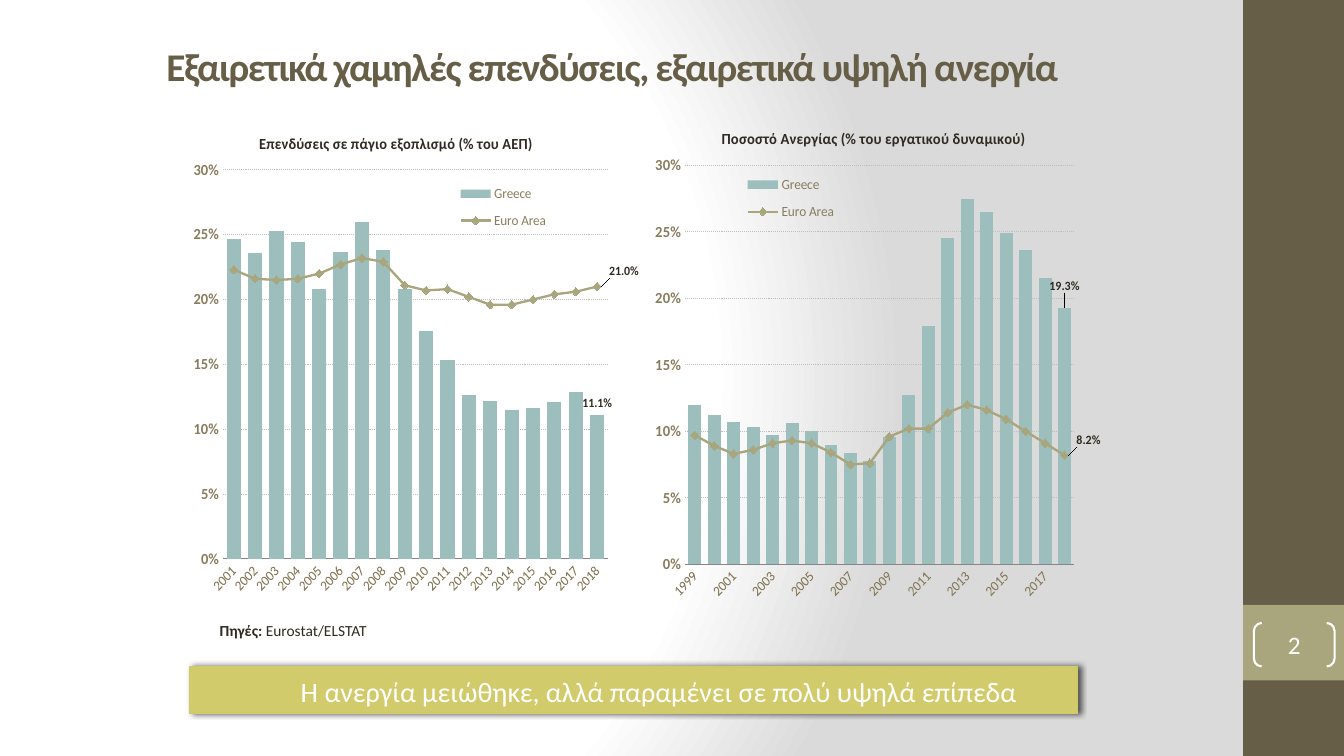
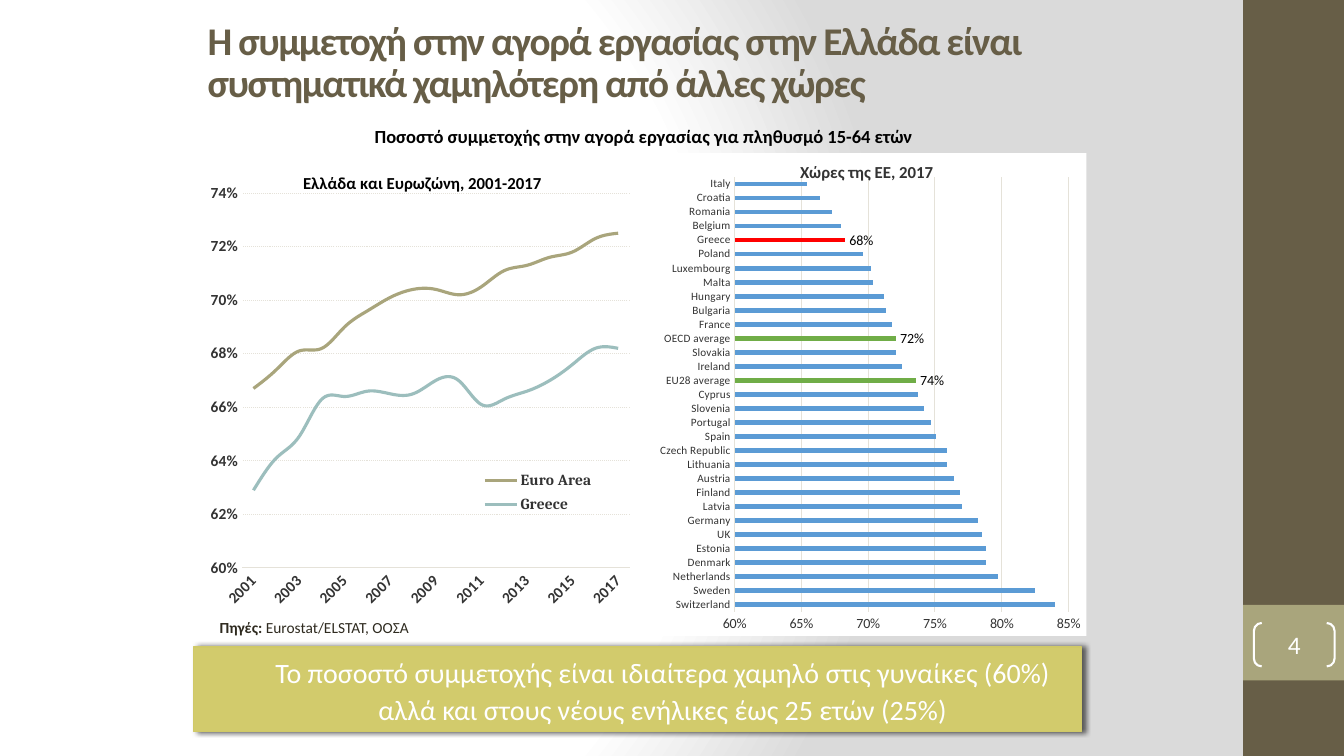
from pptx import Presentation
from pptx.chart.data import CategoryChartData
from pptx.dml.color import RGBColor
from pptx.enum.chart import (XL_CHART_TYPE, XL_LABEL_POSITION, XL_LEGEND_POSITION,
                             XL_MARKER_STYLE, XL_TICK_MARK)
from pptx.enum.dml import MSO_LINE
from pptx.enum.shapes import MSO_SHAPE
from pptx.enum.text import MSO_ANCHOR, PP_ALIGN
from pptx.oxml import parse_xml
from pptx.oxml.ns import nsdecls
from pptx.util import Pt

COLUMN = XL_CHART_TYPE.COLUMN_CLUSTERED
BAR = XL_CHART_TYPE.BAR_CLUSTERED
LINE = XL_CHART_TYPE.LINE
LEFT, CENTER = PP_ALIGN.LEFT, PP_ALIGN.CENTER
MIDDLE = MSO_ANCHOR.MIDDLE
DOTTED = MSO_LINE.ROUND_DOT
NO_TICK = XL_TICK_MARK.NONE

OLIVE = RGBColor(0x67, 0x5E, 0x47)
KHAKI = RGBColor(0xA9, 0xA5, 0x7C)
TEAL = RGBColor(0x9C, 0xBE, 0xBD)
LIME = RGBColor(0xD2, 0xCB, 0x6C)
LIME_EDGE = RGBColor(0xD0, 0xC9, 0x67)
INK = RGBColor(0x2F, 0x2B, 0x20)
TAUPE = RGBColor(0x89, 0x7D, 0x5D)
CHARCOAL = RGBColor(0x33, 0x33, 0x33)
BLACK = RGBColor(0, 0, 0)
WHITE = RGBColor(0xFF, 0xFF, 0xFF)
GRAY = RGBColor(0xBF, 0xBF, 0xBF)
AXIS_GRAY = RGBColor(0x86, 0x86, 0x86)
PALE = RGBColor(0xE5, 0xE2, 0xD9)
BLUE = RGBColor(0x5B, 0x9B, 0xD5)
GREEN = RGBColor(0x70, 0xAD, 0x47)
RED = RGBColor(0xFF, 0, 0)


def style_font(font, size, color, bold=False, name="Calibri"):
    font.name, font.size, font.bold = name, Pt(size), bold
    font.color.rgb = color


def set_layout(owner, index, edge=True, inner=False, **fractions):
    """Give a chart part a manual layout, as fractions of the chart."""
    for old in owner.xpath("c:layout"):
        owner.remove(old)
    target = '<c:layoutTarget val="inner"/>' if inner else ""
    modes = '<c:xMode val="edge"/><c:yMode val="edge"/>' if edge else ""
    values = "".join(f'<c:{key} val="{value}"/>' for key, value in fractions.items())
    owner.insert(index, parse_xml(
        f'<c:layout {nsdecls("c")}><c:manualLayout>{target}{modes}{values}'
        "</c:manualLayout></c:layout>"))


# Chart data; a series is name, values, colour and labelled points with label offsets
INVESTMENT = [
    ("Greece", [0.247, 0.236, 0.253, 0.244, 0.208, 0.237, 0.26, 0.238, 0.208, 0.176,
                0.153, 0.126, 0.122, 0.115, 0.116, 0.121, 0.129, 0.111],
     TEAL, {17: None}),
    ("Euro Area", [0.223, 0.216, 0.215, 0.216, 0.22, 0.227, 0.232, 0.229, 0.211, 0.207,
                   0.208, 0.202, 0.196, 0.196, 0.2, 0.204, 0.206, 0.21],
     KHAKI, {17: (0.01, -0.03)}),
]
UNEMPLOYMENT = [
    ("Greece", [0.12, 0.112, 0.107, 0.103, 0.097, 0.106, 0.1, 0.09, 0.084, 0.078,
                0.096, 0.127, 0.179, 0.245, 0.275, 0.265, 0.249, 0.236, 0.215, 0.193],
     TEAL, {19: (0, -0.02)}),
    ("Euro Area", [0.097, 0.089, 0.083, 0.086, 0.091, 0.093, 0.091, 0.084, 0.075, 0.076,
                   0.096, 0.102, 0.102, 0.114, 0.12, 0.116, 0.109, 0.1, 0.091, 0.082],
     KHAKI, {19: (0.01, -0.03)}),
]
PARTICIPATION = [
    ("Euro Area", [0.667, 0.674, 0.681, 0.682, 0.69, 0.696, 0.701, 0.704, 0.704, 0.702,
                   0.705, 0.711, 0.713, 0.716, 0.718, 0.723, 0.725], KHAKI, {}),
    ("Greece", [0.629, 0.641, 0.649, 0.663, 0.664, 0.666, 0.665, 0.665, 0.67, 0.67,
                0.661, 0.663, 0.666, 0.67, 0.676, 0.682, 0.682], TEAL, {}),
]
COUNTRIES = {
    "Switzerland": 0.84, "Sweden": 0.825, "Netherlands": 0.797, "Denmark": 0.788,
    "Estonia": 0.788, "UK": 0.785, "Germany": 0.782, "Latvia": 0.77, "Finland": 0.769,
    "Austria": 0.764, "Lithuania": 0.759, "Czech Republic": 0.759, "Spain": 0.751,
    "Portugal": 0.747, "Slovenia": 0.742, "Cyprus": 0.737, "EU28 average": 0.736,
    "Ireland": 0.725, "Slovakia": 0.721, "OECD average": 0.721, "France": 0.718,
    "Bulgaria": 0.713, "Hungary": 0.712, "Malta": 0.704, "Luxembourg": 0.702,
    "Poland": 0.696, "Greece": 0.683, "Belgium": 0.68, "Romania": 0.673,
    "Croatia": 0.664, "Italy": 0.654,
}
HIGHLIGHTS = {16: GREEN, 19: GREEN, 26: RED}

# What each kind of chart looks like; fonts are size, colour, bold, name
STYLES = {
    COLUMN: dict(format="0.0%", fill=None, gap=50, scale=(0, 0.3, 0.05),
                 grid=(GRAY, DOTTED), axis_line=AXIS_GRAY, title=(11, INK, True),
                 cat=(10, TAUPE), val=(11, TAUPE, True), label=(9, INK, True),
                 legend=(10, TAUPE)),
    BAR: dict(format="0%", fill=WHITE, gap=219, scale=(0.6, 0.85, 0.05),
              grid=(PALE, None), axis_line=PALE, title=(12, CHARCOAL, True),
              cat=(8, CHARCOAL), val=(10, CHARCOAL), label=(10, BLACK)),
    LINE: dict(format="0%", fill=WHITE, scale=(0.6, 0.74, 0.02),
               grid=(PALE, DOTTED), axis_line=PALE, title=(12, BLACK, True),
               cat=(11, CHARCOAL, True), val=(11, CHARCOAL, True),
               legend=(11, CHARCOAL, True, "Cambria")),
}

# Slide contents; boxes are left, top, width, height in points
PAGES = [
    dict(number="2", title="Εξαιρετικά χαμηλές επενδύσεις, εξαιρετικά υψηλή ανεργία",
         title_box=(111.6, 15.8, 681.1, 62.6), title_spacing=33.6,
         sources="Eurostat/ELSTAT", sources_top=440,
         message="Η ανεργία μειώθηκε, αλλά παραμένει σε πολύ υψηλά επίπεδα",
         message_box=(135.4, 475.9, 634.3, 33.8),
         charts=[
             dict(kind=COLUMN, title="Επενδύσεις σε πάγιο εξοπλισμό (% του ΑΕΠ)",
                  box=(138.2, 85.7, 318.2, 356.4), title_at=(0.13, 0.02),
                  plot=(0.05, 0.1, 0.92, 0.78), legend_box=(0.61, 0.11, 0.22, 0.13),
                  cats=range(2001, 2019), skip=1, series=INVESTMENT),
             dict(kind=COLUMN, title="Ποσοστό Ανεργίας (% του εργατικού δυναμικού)",
                  box=(468, 82.1, 318.2, 360.7), title_at=(0.13, 0.02),
                  plot=(0.05, 0.1, 0.92, 0.79), legend_box=(0.19, 0.1, 0.22, 0.13),
                  cats=range(1999, 2019), skip=2, series=UNEMPLOYMENT),
         ]),
    dict(number="4", title="Η συμμετοχή στην αγορά εργασίας στην Ελλάδα είναι "
                           "συστηματικά χαμηλότερη από άλλες χώρες",
         title_box=(141.1, 10.1, 716.4, 69.8), title_spacing=30,
         heading="Ποσοστό συμμετοχής στην αγορά εργασίας για πληθυσμό 15-64 ετών",
         sources="Eurostat/ELSTAT, ΟΟΣΑ", sources_top=437.8,
         message="Το ποσοστό συμμετοχής είναι ιδιαίτερα χαμηλό στις γυναίκες (60%) "
                 "αλλά και στους νέους ενήλικες έως 25 ετών (25%)",
         message_box=(138.2, 462.2, 634.3, 60.5),
         charts=[
             dict(kind=BAR, title="Χώρες της ΕΕ, 2017",
                  box=(457.9, 109.4, 318.2, 344.9), title_at=(0.35, 0.01),
                  plot=(0.21, 0.05, 0.75, 0.9), cats=COUNTRIES,
                  series=[("Series 1", COUNTRIES.values(), BLUE,
                           dict.fromkeys(HIGHLIGHTS))]),
             dict(kind=LINE, title="Ελλάδα και Ευρωζώνη, 2001-2017",
                  box=(141.1, 106.6, 318.2, 347.8), title_at=(0.23, 0.04),
                  plot=(0.1, 0.09, 0.87, 0.77), legend_box=(0.63, 0.65, 0.27, 0.11),
                  cats=range(2001, 2018), skip=2, series=PARTICIPATION),
         ]),
]

deck = Presentation()
deck.slide_width, deck.slide_height = Pt(960), Pt(540)
master = deck.slide_master
title_only = deck.slide_layouts[5]
pages = [deck.slides.add_slide(title_only) for _ in PAGES]

# Shared background
master.background.fill.gradient()
gradient = master.element.xpath("p:cSld/p:bg/p:bgPr/a:gradFill")[0]
stops = "".join(f'<a:gs pos="{position}"><a:srgbClr val="{color}"/></a:gs>'
                for position, color in ((0, "FFFFFF"), (75000, "FFFFFF"), (100000, "DADADA")))
gradient.getparent().replace(gradient, parse_xml(
    f'<a:gradFill {nsdecls("a")} rotWithShape="1"><a:gsLst>{stops}</a:gsLst>'
    '<a:path path="circle"><a:fillToRect l="20000" t="50000" r="100000" b="50000"/>'
    "</a:path></a:gradFill>"))

# Shared side bands, moved to the back of the master
for order, (top, height, color) in enumerate([(0, 540, OLIVE), (432, 54, KHAKI)]):
    band = pages[0].shapes.add_shape(MSO_SHAPE.RECTANGLE, Pt(888), Pt(top), Pt(72), Pt(height))
    band.shadow.inherit = False
    band.fill.solid()
    band.fill.fore_color.rgb = color
    band.line.fill.background()
    band.element.xpath("p:nvSpPr/p:cNvPr")[0].set("id", str(20 + order))
    master.shapes.element.insert(2 + order, band.element)

for page, content in zip(pages, PAGES):
    # Title
    title = page.shapes.title
    title.left, title.top, title.width, title.height = map(Pt, content["title_box"])
    title.text_frame.text = content["title"]
    title.text_frame.vertical_anchor = MIDDLE
    para = title.text_frame.paragraphs[0]
    para.alignment, para.line_spacing = LEFT, Pt(content["title_spacing"])
    style_font(para.runs[0].font, 28, OLIVE, True)
    title.element.xpath(".//a:rPr")[0].set("spc", "-100")

    # Charts
    for spec in content["charts"]:
        kind, style = spec["kind"], STYLES[spec["kind"]]
        data = CategoryChartData(number_format=style["format"])
        data.categories = [str(category) for category in spec["cats"]]
        for name, values, _, _ in spec["series"]:
            data.add_series(name, values)
        chart = page.shapes.add_chart(kind, *map(Pt, spec["box"]), data).chart
        root = chart.element
        style_font(chart.font, 10, INK)
        paint = (f'<a:solidFill><a:srgbClr val="{style["fill"]}"/></a:solidFill>'
                 if style["fill"] else "<a:noFill/>")
        root.xpath("c:chart")[0].addnext(parse_xml(
            f'<c:spPr {nsdecls("c", "a")}>{paint}<a:ln><a:noFill/></a:ln></c:spPr>'))

        # Euro Area becomes a line over the columns
        if kind == COLUMN:
            columns = root.xpath(".//c:barChart")[0]
            overlay = parse_xml(f'<c:lineChart {nsdecls("c")}><c:grouping val="standard"/>'
                                '<c:varyColors val="0"/></c:lineChart>')
            euro = columns.xpath("c:ser")[-1]
            for bar_only in euro.xpath("c:invertIfNegative"):
                euro.remove(bar_only)
            overlay.append(euro)
            overlay.append(parse_xml(f'<c:marker {nsdecls("c")} val="1"/>'))
            for axis in root.xpath("c:chart/c:plotArea/*[self::c:catAx or self::c:valAx]"):
                axis_id = axis.xpath("c:axId/@val")[0]
                overlay.append(parse_xml(f'<c:axId {nsdecls("c")} val="{axis_id}"/>'))
            columns.addnext(overlay)

        # Title, plot area and legend
        chart.has_title = True
        chart.chart_title.text_frame.text = spec["title"]
        style_font(chart.chart_title.text_frame.paragraphs[0].runs[0].font, *style["title"])
        for chart_title in root.xpath("c:chart/c:title"):
            set_layout(chart_title, 1, **dict(zip("xy", spec["title_at"])))
        for plot_area in root.xpath("c:chart/c:plotArea"):
            set_layout(plot_area, 0, inner=True, **dict(zip("xywh", spec["plot"])))
        chart.has_legend = "legend" in style
        if chart.has_legend:
            chart.legend.position = XL_LEGEND_POSITION.BOTTOM
            chart.legend.include_layout = False
            style_font(chart.legend.font, *style["legend"])
            for legend in root.xpath("c:chart/c:legend"):
                # The position element is left out of the file when it is the default
                set_layout(legend, len(legend.xpath("c:legendPos")),
                           **dict(zip("xywh", spec["legend_box"])))

        # Axes
        category_axis, value_axis = chart.category_axis, chart.value_axis
        for axis, font in ((category_axis, style["cat"]), (value_axis, style["val"])):
            axis.major_tick_mark = axis.minor_tick_mark = NO_TICK
            style_font(axis.tick_labels.font, *font)
        category_axis.has_major_gridlines = False
        category_axis.format.line.color.rgb = style["axis_line"]
        category_axis.format.line.width = Pt(0.75)
        if "skip" in spec:
            for body in root.xpath(".//c:catAx/c:txPr/a:bodyPr"):
                body.set("rot", "-2700000")
            for last in root.xpath(".//c:catAx/c:noMultiLvlLbl"):
                last.addprevious(parse_xml(
                    f'<c:tickLblSkip {nsdecls("c")} val="{spec["skip"]}"/>'))
        value_axis.minimum_scale, value_axis.maximum_scale, value_axis.major_unit = style["scale"]
        value_axis.tick_labels.number_format = "0%"
        value_axis.tick_labels.number_format_is_linked = False
        value_axis.format.line.fill.background()
        grid = value_axis.major_gridlines.format.line
        grid.color.rgb, grid.dash_style = style["grid"]
        grid.width = Pt(0.75)

        # Series and point labels
        for plot in chart.plots:
            plot.vary_by_categories = False
        if "gap" in style:
            chart.plots[0].gap_width = style["gap"]
        all_series = [series for plot in chart.plots for series in plot.series]
        for number, (series, (_, _, color, labels)) in enumerate(zip(all_series, spec["series"])):
            is_line = kind == LINE or number == 1
            if is_line:
                series.format.line.color.rgb = color
                series.format.line.width = Pt(2.25 if kind == LINE else 1.75)
                series.smooth = kind == LINE
                series.marker.style = XL_MARKER_STYLE.NONE
                if kind == COLUMN:
                    series.marker.style = XL_MARKER_STYLE.DIAMOND
                    series.marker.size = 6
                    series.marker.format.fill.solid()
                    series.marker.format.fill.fore_color.rgb = color
                    series.marker.format.line.color.rgb = color
            else:
                series.format.fill.solid()
                series.format.fill.fore_color.rgb = color
            for index, offset in labels.items():
                point = series.points[index]
                style_font(point.data_label.font, *style["label"])
                point.data_label.position = (XL_LABEL_POSITION.RIGHT if is_line
                                             else XL_LABEL_POSITION.OUTSIDE_END)
                series.data_labels.show_value = False
                if kind == BAR:
                    point.format.fill.solid()
                    point.format.fill.fore_color.rgb = HIGHLIGHTS[index]
                if offset:
                    for label in root.xpath(f".//c:ser[c:idx/@val='{number}']"
                                            f"//c:dLbl[c:idx/@val='{index}']"):
                        set_layout(label, 1, edge=False, **dict(zip("xy", offset)))

    # Heading above the charts
    if "heading" in content:
        heading = page.shapes.add_textbox(Pt(217.4), Pt(85.7), Pt(484.6), Pt(23))
        heading.text_frame.word_wrap = True
        heading.text_frame.text = content["heading"]
        para = heading.text_frame.paragraphs[0]
        para.alignment = CENTER
        style_font(para.runs[0].font, 13.2, BLACK, True)

    # Sources
    sources = page.shapes.add_textbox(Pt(149.8), Pt(content["sources_top"]), Pt(162), Pt(20.9))
    sources.text_frame.word_wrap = True
    para = sources.text_frame.paragraphs[0]
    for text, bold in (("Πηγές: ", True), (content["sources"], False)):
        span = para.add_run()
        span.text = text
        style_font(span.font, 11, INK, bold)

    # Message bar
    message = page.shapes.add_shape(MSO_SHAPE.RECTANGLE, *map(Pt, content["message_box"]))
    message.fill.solid()
    message.fill.fore_color.rgb = LIME
    message.line.color.rgb = LIME_EDGE
    message.line.width = Pt(1)
    message.shadow.inherit = False
    message.element.xpath("p:spPr/a:effectLst")[0].append(parse_xml(
        f'<a:outerShdw {nsdecls("a")} blurRad="50800" dist="25400" dir="0">'
        '<a:srgbClr val="000000"><a:alpha val="60000"/></a:srgbClr></a:outerShdw>'))
    message.text_frame.margin_left = Pt(43.2)
    message.text_frame.text = content["message"]
    para = message.text_frame.paragraphs[0]
    para.alignment, para.line_spacing = CENTER, 1.1
    style_font(para.runs[0].font, 20, WHITE)

    # Page number in brackets
    badge = page.shapes.add_shape(MSO_SHAPE.DOUBLE_BRACKET, Pt(895.7), Pt(445), Pt(57.6), Pt(31))
    badge.adjustments[0] = 0.18
    badge.shadow.inherit = False
    badge.fill.background()
    badge.line.color.rgb = WHITE
    badge.line.width = Pt(1.5)
    frame = badge.text_frame
    frame.margin_left = frame.margin_top = frame.margin_right = frame.margin_bottom = 0
    frame.vertical_anchor = MIDDLE
    frame.text = content["number"]
    frame.paragraphs[0].alignment = CENTER
    style_font(frame.paragraphs[0].runs[0].font, 18, WHITE)

deck.save("out.pptx")
